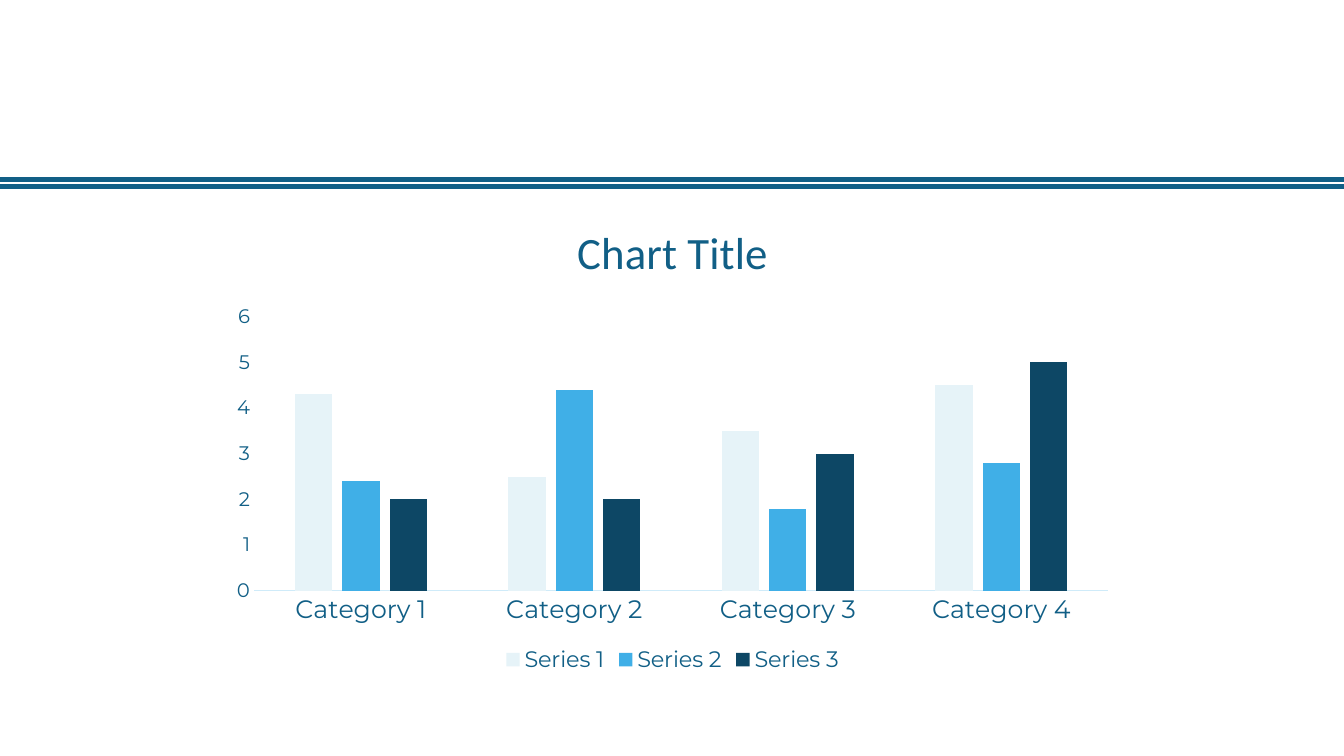
from dataclasses import dataclass
from typing import Any

from lxml import etree
from pptx import Presentation
from pptx.chart.data import CategoryChartData
from pptx.dml.color import RGBColor
from pptx.enum.chart import XL_CHART_TYPE, XL_LEGEND_POSITION, XL_TICK_MARK
from pptx.enum.shapes import MSO_CONNECTOR
from pptx.oxml.ns import qn
from pptx.util import Inches, Pt

COLUMN = XL_CHART_TYPE.COLUMN_CLUSTERED
BOTTOM = XL_LEGEND_POSITION.BOTTOM
NO_TICK = XL_TICK_MARK.NONE
STRAIGHT = MSO_CONNECTOR.STRAIGHT


@dataclass(frozen=True)
class Theme:
    ink: str = "115F86"
    axis: str = "CFEBF9"
    head: str = "Calibri"
    body: str = "Montserrat"
    base_size: int = 10
    title_size: int = 32
    cat_size: int = 18
    value_size: int = 14
    key_size: int = 16


@dataclass(frozen=True)
class Series:
    name: str
    values: tuple[float, ...]
    color: str


THEME = Theme()
WIDTH, HEIGHT = 13.33, 7.5
RULES = (1.78, 1.85)
CATS = [f"Category {n}" for n in range(1, 5)]
SERIES = (
    Series("Series 1", (4.3, 2.5, 3.5, 4.5), "E6F3F8"),
    Series("Series 2", (2.4, 4.4, 1.8, 2.8), "40AFE7"),
    Series("Series 3", (2, 2, 3, 5), "0D4765"),
)


def apply(target: Any, values: dict[str, Any]) -> None:
    for name, value in values.items():
        setattr(target, name, value)


def style(font: Any, face: str, size: int) -> None:
    apply(font, {"name": face, "size": Pt(size), "bold": False})
    font.color.rgb = RGBColor.from_string(THEME.ink)


def add_rule(slide: Any, top: float) -> None:
    rule = slide.shapes.add_connector(
        STRAIGHT, Inches(0), Inches(top), Inches(WIDTH), Inches(top))
    rule.line.width = Pt(3)
    rule.line.color.rgb = RGBColor.from_string(THEME.ink)
    etree.SubElement(rule._element.spPr, qn("a:effectLst"))


def add_graph(slide: Any) -> None:
    data = CategoryChartData()
    data.categories = CATS
    for item in SERIES:
        data.add_series(item.name, item.values)
    chart = slide.shapes.add_chart(
        COLUMN, Inches(2.17), Inches(1.96), Inches(9), Inches(4.76), data).chart
    style(chart.font, THEME.head, THEME.base_size)

    # Title
    chart.has_title = True
    chart.chart_title.include_in_layout = False
    frame = chart.chart_title.text_frame
    frame.text = "Chart Title"
    style(frame.paragraphs[0].runs[0].font, THEME.head, THEME.title_size)

    # Columns
    plot = chart.plots[0]
    apply(plot, {"gap_width": 219, "overlap": -27, "vary_by_categories": False})
    for bars, item in zip(plot.series, SERIES):
        bars.format.fill.solid()
        bars.format.fill.fore_color.rgb = RGBColor.from_string(item.color)

    # Axes
    ticks = {"major_tick_mark": NO_TICK, "minor_tick_mark": NO_TICK,
             "has_major_gridlines": False}
    cats, vals = chart.category_axis, chart.value_axis
    for axis, size in ((cats, THEME.cat_size), (vals, THEME.value_size)):
        apply(axis, ticks)
        style(axis.tick_labels.font, THEME.body, size)
    apply(vals, {"minimum_scale": 0, "maximum_scale": 6, "major_unit": 1})
    vals.format.line.fill.background()
    cats.format.line.width = Pt(0.75)
    cats.format.line.color.rgb = RGBColor.from_string(THEME.axis)

    # Legend
    chart.has_legend = True
    apply(chart.legend, {"position": BOTTOM, "include_in_layout": False})
    style(chart.legend.font, THEME.body, THEME.key_size)


def main() -> None:
    deck = Presentation()
    apply(deck, {"slide_width": Inches(WIDTH), "slide_height": Inches(HEIGHT)})
    slide = deck.slides.add_slide(deck.slide_layouts[6])

    # Double rule under the header
    for top in RULES:
        add_rule(slide, top)
    add_graph(slide)
    deck.save("out.pptx")


if __name__ == "__main__":
    main()
